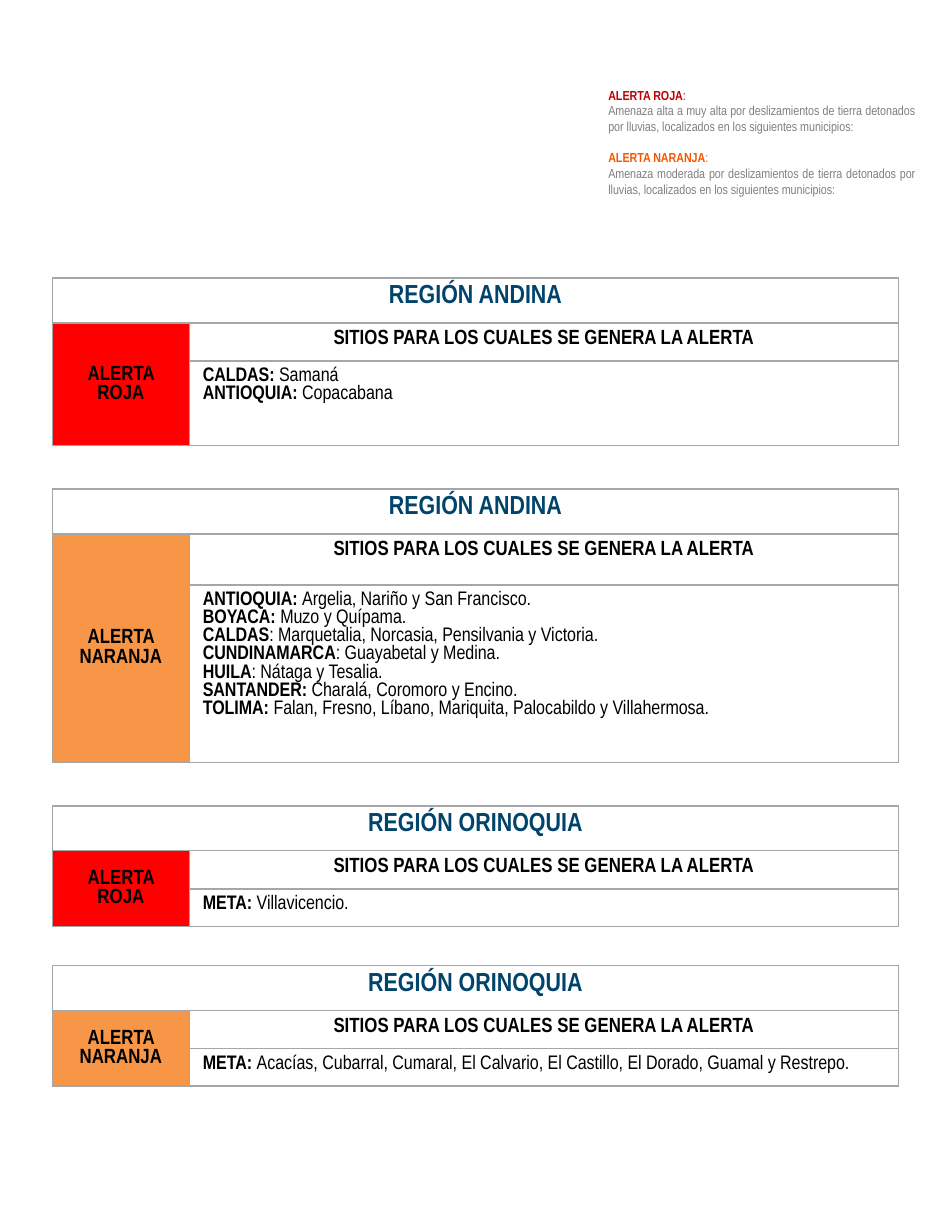
import pptx
import pptx.dml.color
import pptx.enum.text
import pptx.oxml
import pptx.oxml.ns
import pptx.util
from lxml import etree

RGB = pptx.dml.color.RGBColor
ALIGN = pptx.enum.text.PP_ALIGN
MIDDLE = pptx.enum.text.MSO_ANCHOR.MIDDLE
Cm, Inches, Pt = pptx.util.Cm, pptx.util.Inches, pptx.util.Pt

RED, ORANGE = RGB(0xFF, 0x00, 0x00), RGB(0xF7, 0x96, 0x46)
DARK_RED, DEEP_ORANGE = RGB(0xC0, 0x00, 0x00), RGB(0xF6, 0x58, 0x00)
GREY, NAVY, BLACK = RGB(0x80, 0x80, 0x80), RGB(0x00, 0x44, 0x6B), RGB(0, 0, 0)
BORDER = RGB(0xA6, 0xA6, 0xA6)
FONT = "Arial Narrow"

SITES_HEADING = "SITIOS PARA LOS CUALES SE GENERA LA ALERTA"
LEGEND = [
    ("ALERTA ROJA", DARK_RED,
     "Amenaza alta a muy alta por deslizamientos de tierra detonados por lluvias, "
     "localizados en los siguientes municipios:"),
    ("ALERTA NARANJA", DEEP_ORANGE,
     "Amenaza moderada por deslizamientos de tierra detonados por lluvias, "
     "localizados en los siguientes municipios:"),
]
# region, alert, alert colour, top, heights of heading and site rows, sites
ALERTS = [
    ("REGIÓN ANDINA", "ALERTA ROJA", RED, 2.07, (0.28, 0.63), [
        ("CALDAS: ", "Samaná"),
        ("ANTIOQUIA: ", "Copacabana")]),
    ("REGIÓN ANDINA", "ALERTA NARANJA", ORANGE, 3.64, (0.38, 1.32), [
        ("ANTIOQUIA: ", "Argelia, Nariño y San Francisco."),
        ("BOYACA: ", "Muzo y Quípama."),
        ("CALDAS", ": Marquetalia, Norcasia, Pensilvania y Victoria."),
        ("CUNDINAMARCA", ": Guayabetal y Medina."),
        ("HUILA", ": Nátaga y Tesalia."),
        ("SANTANDER: ", "Charalá, Coromoro y Encino."),
        ("TOLIMA: ", "Falan, Fresno, Líbano, Mariquita, Palocabildo y Villahermosa.")]),
    ("REGIÓN ORINOQUIA", "ALERTA ROJA", RED, 6.0, (0.28, 0.28), [
        ("META: ", "Villavicencio.")]),
    ("REGIÓN ORINOQUIA", "ALERTA NARANJA", ORANGE, 7.19, (0.28, 0.28), [
        ("META: ", "Acacías, Cubarral, Cumaral, El Calvario, El Castillo, "
                   "El Dorado, Guamal y Restrepo.")]),
]
TABLE_LEFT, COLUMNS, REGION_HEIGHT = 0.39, (1.02, 5.28), 0.33


def add_text(frame, *runs, size, color=BLACK, align=ALIGN.LEFT, before=None):
    """Fill the first empty paragraph or add one; runs are (text, bold)."""
    first = frame.paragraphs[0]
    paragraph = frame.add_paragraph() if first.runs else first
    paragraph.alignment = align
    paragraph.space_before = before
    for text, bold in runs:
        run = paragraph.add_run()
        run.text = text
        run.font.name, run.font.size, run.font.bold = FONT, Pt(size), bold
        run.font.color.rgb = color


def add_borders(cell):
    properties = cell._tc.get_or_add_tcPr()
    for side in ("a:lnL", "a:lnR", "a:lnT", "a:lnB"):
        line = etree.SubElement(properties, pptx.oxml.ns.qn(side), w=str(Pt(1)))
        fill = etree.SubElement(line, pptx.oxml.ns.qn("a:solidFill"))
        etree.SubElement(fill, pptx.oxml.ns.qn("a:srgbClr"), val=str(BORDER))


def add_legend(slide):
    box = slide.shapes.add_textbox(Inches(4.43), Inches(0.6), Inches(2.48), Inches(0.93))
    frame = box.text_frame
    frame.word_wrap = True
    for index, (alert, color, meaning) in enumerate(LEGEND):
        add_text(frame, (alert, True), (":", False), size=7, color=color,
                 before=Pt(8.4) if index else None)
        add_text(frame, (meaning, False), size=7, color=GREY, align=ALIGN.JUSTIFY)


def add_alert(slide, region, alert, color, top, heights, sites):
    heights = (REGION_HEIGHT, *heights)
    table = slide.shapes.add_table(
        len(heights), len(COLUMNS), Inches(TABLE_LEFT), Inches(top),
        Inches(sum(COLUMNS)), Inches(sum(heights))).table
    table.first_row = table.horz_banding = False
    for column, width in zip(table.columns, COLUMNS):
        column.width = Inches(width)
    for row, height in zip(table.rows, heights):
        row.height = Inches(height)
    for cell in table.iter_cells():
        add_borders(cell)
        cell.fill.background()

    region_cell, alert_cell = table.cell(0, 0), table.cell(1, 0)
    region_cell.merge(table.cell(0, 1))
    alert_cell.merge(table.cell(2, 0))
    alert_cell.fill.solid()
    alert_cell.fill.fore_color.rgb = color
    alert_cell.vertical_anchor = MIDDLE

    headings = [(region_cell, region, 14, NAVY), (alert_cell, alert, 11, BLACK),
                (table.cell(1, 1), SITES_HEADING, 11, BLACK)]
    for cell, text, size, text_color in headings:
        add_text(cell.text_frame, (text, True), size=size, color=text_color,
                 align=ALIGN.CENTER)
    for department, towns in sites:
        add_text(table.cell(2, 1).text_frame, (department, True), (towns, False),
                 size=10.5, align=ALIGN.JUSTIFY)


def main():
    deck = pptx.Presentation()
    deck.slide_width, deck.slide_height = Cm(18), Cm(23.3)
    slide = deck.slides.add_slide(deck.slide_layouts[6])
    add_legend(slide)
    for alert in ALERTS:
        add_alert(slide, *alert)
    deck.save("out.pptx")


if __name__ == "__main__":
    main()
